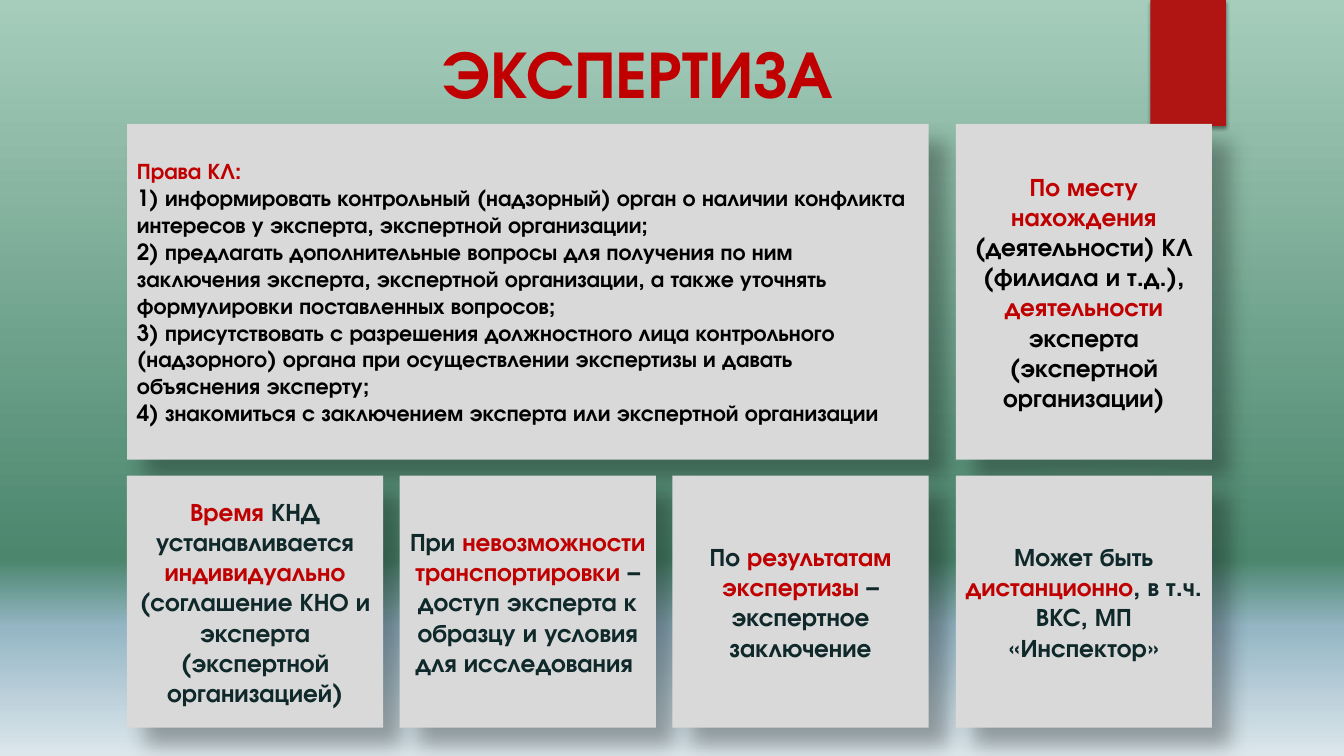
from lxml import etree
from pptx import Presentation
from pptx import util as u
from pptx.dml.color import RGBColor
from pptx.enum import shapes, text
from pptx.oxml import ns

FONT = "TeX Gyre Adventor"
RED = RGBColor(0xC0, 0x00, 0x00)
RIBBON_RED = RGBColor(0xB0, 0x15, 0x13)
CARD_GREY = RGBColor(0xD9, 0xD9, 0xD9)
BLACK = RGBColor(0x00, 0x00, 0x00)
DARK = RGBColor(0x0F, 0x28, 0x2A)
GLOW = RGBColor(0x50, 0xB9, 0xC1)
SKY = [(0, RGBColor(0xA6, 0xCD, 0xBC), 100), (74, RGBColor(0x4B, 0x86, 0x6D), 100),
       (83, RGBColor(0x95, 0xB6, 0xC5), 100), (100, RGBColor(0xDC, 0xE7, 0xEC), 100)]
GLOW_STOPS = [(0, GLOW, 7), (36, GLOW, 6), (69, GLOW, 0)]

# Grid in inches: three columns under the wide card, one column at the right
LEFT, CARD_WIDTH, WIDE_WIDTH, RIGHT = 1.26, 2.54, 7.95, 9.48
PITCH = (WIDE_WIDTH - CARD_WIDTH) / 2
TOP, TOP_HEIGHT, BOTTOM, BOTTOM_HEIGHT = 1.23, 3.33, 4.72, 2.5

RIGHTS = [
    "*Права КЛ:*",
    "1) информировать контрольный (надзорный) орган о наличии конфликта интересов у эксперта, "
    "экспертной организации;",
    "2) предлагать дополнительные вопросы для получения по ним заключения эксперта, экспертной "
    "организации, а также уточнять формулировки поставленных вопросов;",
    "3) присутствовать с разрешения должностного лица контрольного (надзорного) органа при "
    "осуществлении экспертизы и давать объяснения эксперту;",
    "4) знакомиться с заключением эксперта или экспертной организации",
]
PLACE = ("*По месту нахождения *(деятельности) КЛ (филиала и т.д.), *деятельности* "
         "эксперта (экспертной организации)")
CONDITIONS = [
    "*Время* КНД устанавливается *индивидуально* (соглашение КНО и эксперта "
    "(экспертной организацией)",
    "При *невозможности транспортировки *– доступ эксперта к образцу и условия для исследования ",
    "По *результатам экспертизы *– экспертное заключение",
    "Может быть *дистанционно*, в т.ч. ВКС, МП «Инспектор»",
]


def inches(box):
    return [u.Inches(length) for length in box]


def add_element(parent, tag, **attributes):
    return etree.SubElement(parent, ns.qn(tag), {k: str(v) for k, v in attributes.items()})


def add_colour(parent, colour, opacity):
    element = add_element(parent, "a:srgbClr", val=colour)
    if opacity < 100:
        add_element(element, "a:alpha", val=opacity * 1000)


def set_stops(owner, stops):
    """Replace the gradient stops inside a slide or shape; return the gradient element."""
    stop_list = next(owner.element.iter(ns.qn("a:gsLst")))
    for stop in list(stop_list):
        stop_list.remove(stop)
    for position, colour, opacity in stops:
        add_colour(add_element(stop_list, "a:gs", pos=position * 1000), colour, opacity)
    return stop_list.getparent()


def add_shadow(shape, opacity, blur, distance, angle):
    effects = shape.element.spPr.find(ns.qn("a:effectLst"))
    shadow = add_element(effects, "a:outerShdw", blurRad=u.Pt(blur), dist=u.Pt(distance),
                         dir=angle * 60000, algn="tl", rotWithShape=0)
    add_colour(shadow, BLACK, opacity)


def add_plain_shape(slide, kind, box):
    shape = slide.shapes.add_shape(kind, *inches(box))
    shape.shadow.inherit = False
    shape.line.fill.background()
    return shape


def write_text(frame, lines, size=18, colour=DARK, align=text.PP_ALIGN.CENTER,
               anchor=text.MSO_ANCHOR.MIDDLE):
    """Fill a text frame, one paragraph a line; parts between asterisks are red."""
    frame.word_wrap = True
    frame.auto_size = text.MSO_AUTO_SIZE.NONE
    frame.vertical_anchor = anchor
    for index, line in enumerate(lines):
        paragraph = frame.add_paragraph() if index else frame.paragraphs[0]
        paragraph.alignment = align
        for part_index, part in enumerate(line.split("*")):
            if not part:
                continue
            run = paragraph.add_run()
            run.text = part
            run.font.name, run.font.size, run.font.bold = FONT, u.Pt(size), True
            run.font.color.rgb = RED if part_index % 2 else colour


def add_backdrop(slide):
    fill = slide.background.fill
    fill.gradient()
    fill.gradient_angle = 270
    set_stops(slide, SKY)

    glow = add_plain_shape(slide, shapes.MSO_SHAPE.OVAL, (9.41, 1.83, 3.08, 3.08))
    glow.fill.gradient()
    gradient = set_stops(glow, GLOW_STOPS)
    gradient.remove(gradient.find(ns.qn("a:lin")))
    circle = add_element(gradient, "a:path", path="circle")
    add_element(circle, "a:fillToRect", l=50000, t=50000, r=50000, b=50000)

    ribbon = add_plain_shape(slide, shapes.MSO_SHAPE.RECTANGLE, (11.41, 0, 0.75, 1.25))
    ribbon.fill.solid()
    ribbon.fill.fore_color.rgb = RIBBON_RED
    add_shadow(ribbon, 45, 3, 2, 90)


def add_title(slide, box):
    title = slide.shapes.title
    title.left, title.top, title.width, title.height = inches(box)
    write_text(title.text_frame, ["*ЭКСПЕРТИЗА*"], size=48, anchor=text.MSO_ANCHOR.TOP)


def add_card(slide, box, lines, **text_format):
    card = add_plain_shape(slide, shapes.MSO_SHAPE.RECTANGLE, box)
    card.fill.solid()
    card.fill.fore_color.rgb = CARD_GREY
    add_shadow(card, 30, 15, 18, 45)
    write_text(card.text_frame, lines, **text_format)


def add_cards(slide):
    add_card(slide, (LEFT, TOP, WIDE_WIDTH, TOP_HEIGHT), RIGHTS, size=16, colour=BLACK,
             align=text.PP_ALIGN.LEFT)
    add_card(slide, (RIGHT, TOP, CARD_WIDTH, TOP_HEIGHT), [PLACE], colour=BLACK)
    columns = [LEFT + PITCH * column for column in range(3)] + [RIGHT]
    for left, condition in zip(columns, CONDITIONS):
        add_card(slide, (left, BOTTOM, CARD_WIDTH, BOTTOM_HEIGHT), [condition])


def main():
    presentation = Presentation()
    presentation.slide_width, presentation.slide_height = inches((13.33, 7.5))
    slide = presentation.slides.add_slide(presentation.slide_layouts[5])
    add_backdrop(slide)
    add_title(slide, (LEFT, 0.26, 10.13, 1.41))
    add_cards(slide)
    presentation.save("out.pptx")


if __name__ == "__main__":
    main()
